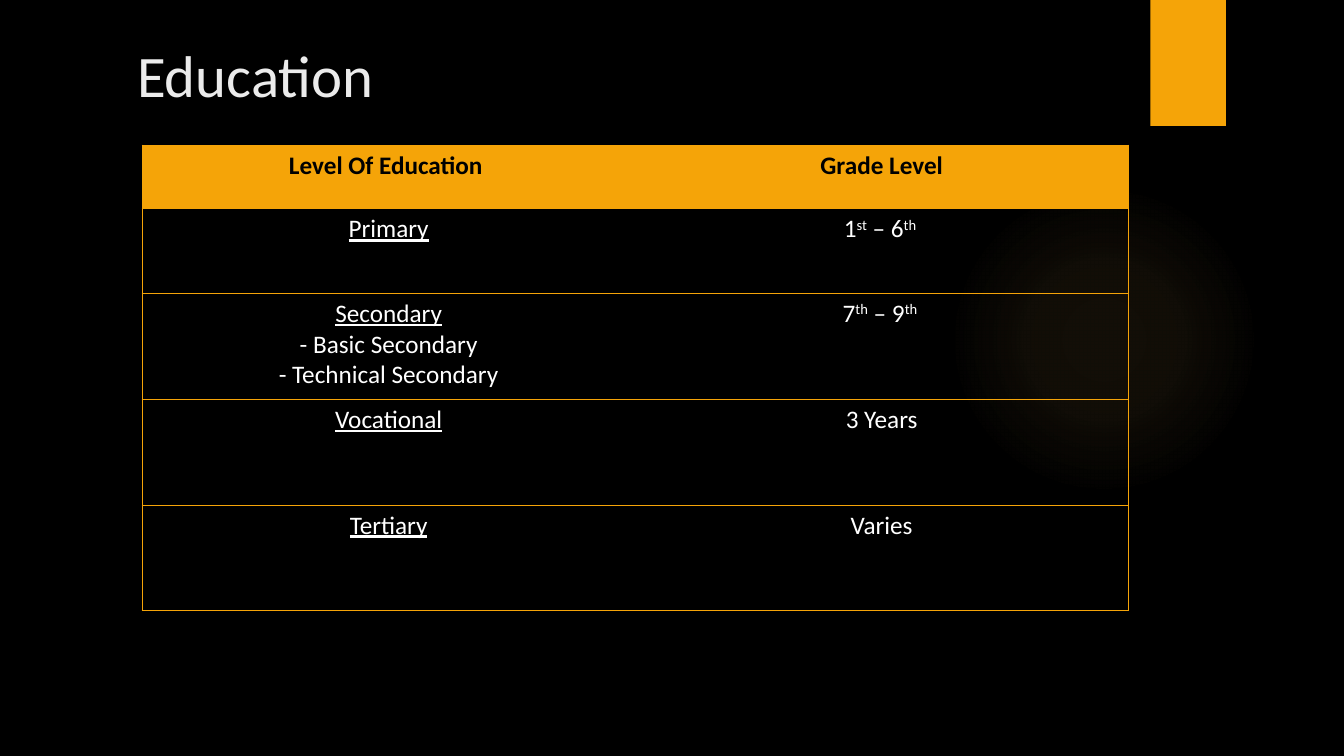
"""Builds the slide with the table of education levels."""
import pptx
import pptx.dml.color
import pptx.enum.shapes
import pptx.enum.text
import pptx.oxml
import pptx.oxml.ns
import pptx.util

Inches = pptx.util.Inches
Pt = pptx.util.Pt
Color = pptx.dml.color.RGBColor
Shape = pptx.enum.shapes.MSO_SHAPE
Align = pptx.enum.text.PP_ALIGN
Anchor = pptx.enum.text.MSO_ANCHOR

BLACK = Color(0x00, 0x00, 0x00)
WHITE = Color(0xFF, 0xFF, 0xFF)
PALE = Color(0xEB, 0xEB, 0xEB)
AMBER = Color(0xF5, 0xA4, 0x08)
GLOW = Color(0xFA, 0xC9, 0x6A)

HEADS = ["Level Of Education ", "Grade Level"]
ROWS = [
    ([["Primary"]], [["1", "st", " – 6", "th "]]),
    ([["Secondary"], ["- Basic Secondary"], ["- Technical Secondary"]],
     [["7", "th", " – 9", "th "]]),
    ([["Vocational"]], [[" 3 Years "]]),
    ([["Tertiary"]], [["Varies"]]),
]
HIGHS = [0.63, 0.84, 1.05, 1.05, 1.05]


class Deck:
    def __init__(self, font):
        self.font = font
        self.show = pptx.Presentation()
        self.show.slide_width = Inches(13.33)
        self.show.slide_height = Inches(7.5)
        self.slide = self.show.slides.add_slide(self.show.slide_layouts[5])
        self.slide.background.fill.solid()
        self.slide.background.fill.fore_color.rgb = BLACK

    def run(self, para, text, size, color, bold=False, under=False, sup=False):
        run = para.add_run()
        run.text = text
        font = run.font
        font.name, font.size, font.bold = self.font, Pt(size), bold
        font.color.rgb = color
        font.underline = under
        if sup:
            run._r.get_or_add_rPr().set("baseline", "30000")

    def shape(self, kind, box, color):
        item = self.slide.shapes.add_shape(kind, *map(Inches, box))
        item.shadow.inherit = False
        item.fill.solid()
        item.fill.fore_color.rgb = color
        item.line.fill.background()
        return item

    def glow(self, box, color, stops):
        item = self.shape(Shape.OVAL, box, color)
        marks = "".join(
            f'<a:gs pos="{pos * 1000}"><a:srgbClr val="{color}">'
            f'<a:alpha val="{alpha * 1000}"/></a:srgbClr></a:gs>'
            for pos, alpha in stops)
        grad = pptx.oxml.parse_xml(
            f'<a:gradFill {pptx.oxml.ns.nsdecls("a")} rotWithShape="1">'
            f'<a:gsLst>{marks}</a:gsLst><a:path path="circle">'
            '<a:fillToRect l="50000" t="50000" r="50000" b="50000"/>'
            '</a:path></a:gradFill>')
        props = item._element.spPr
        props.replace(props.find(pptx.oxml.ns.qn("a:solidFill")), grad)

    def title(self, text, box):
        item = self.slide.shapes.title
        item.left, item.top, item.width, item.height = map(Inches, box)
        self.slide.shapes._spTree.append(item._element)
        frame = item.text_frame
        frame.word_wrap = True
        frame.auto_size = pptx.enum.text.MSO_AUTO_SIZE.NONE
        frame.vertical_anchor = Anchor.TOP
        para = frame.paragraphs[0]
        para.alignment = Align.LEFT
        self.run(para, text, 42, PALE)

    def edge(self, cell, sides, color):
        for side in "LRTB":
            fill = "<a:noFill/>"
            if side in sides:
                fill = f'<a:solidFill><a:srgbClr val="{color}"/></a:solidFill>'
            cell._tc.get_or_add_tcPr().append(pptx.oxml.parse_xml(
                f'<a:ln{side} {pptx.oxml.ns.nsdecls("a")} w="{Pt(0.75)}">'
                f'{fill}</a:ln{side}>'))

    def cell(self, cell, lines, head, first):
        self.edge(cell, "LTB" if first else "RTB", AMBER)
        if head:
            cell.fill.solid()
            cell.fill.fore_color.rgb = AMBER
        else:
            cell.fill.background()
        frame = cell.text_frame
        for row, parts in enumerate(lines):
            para = frame.add_paragraph() if row else frame.paragraphs[0]
            para.alignment = Align.CENTER
            for part in parts:
                self.run(para, part, 18, BLACK if head else WHITE, bold=head,
                         under=first and not head and row == 0,
                         sup=part.strip() in ("st", "th"))

    def table(self, box, heads, rows, highs):
        count = len(heads)
        grid = self.slide.shapes.add_table(
            len(rows) + 1, count, *map(Inches, box)).table
        grid.horz_banding = False
        for col in grid.columns:
            col.width = Inches(box[2] / count)
        for row, high in zip(grid.rows, highs):
            row.height = Inches(high)
        for y, row in enumerate([[[[head]] for head in heads], *rows]):
            for x, lines in enumerate(row):
                self.cell(grid.cell(y, x), lines, y == 0, x == 0)


def main():
    deck = Deck("Calibri")
    deck.glow((9.41, 1.83, 3.08, 3.08), GLOW, [(0, 7), (36, 6), (69, 0)])
    deck.shape(Shape.RECTANGLE, (11.41, 0, 0.75, 1.25), AMBER)
    deck.title("Education", (1.26, 0.33, 10.29, 1.53))
    deck.table((1.41, 1.44, 9.78, sum(HIGHS)), HEADS, ROWS, HIGHS)
    deck.show.save("out.pptx")


if __name__ == "__main__":
    main()
